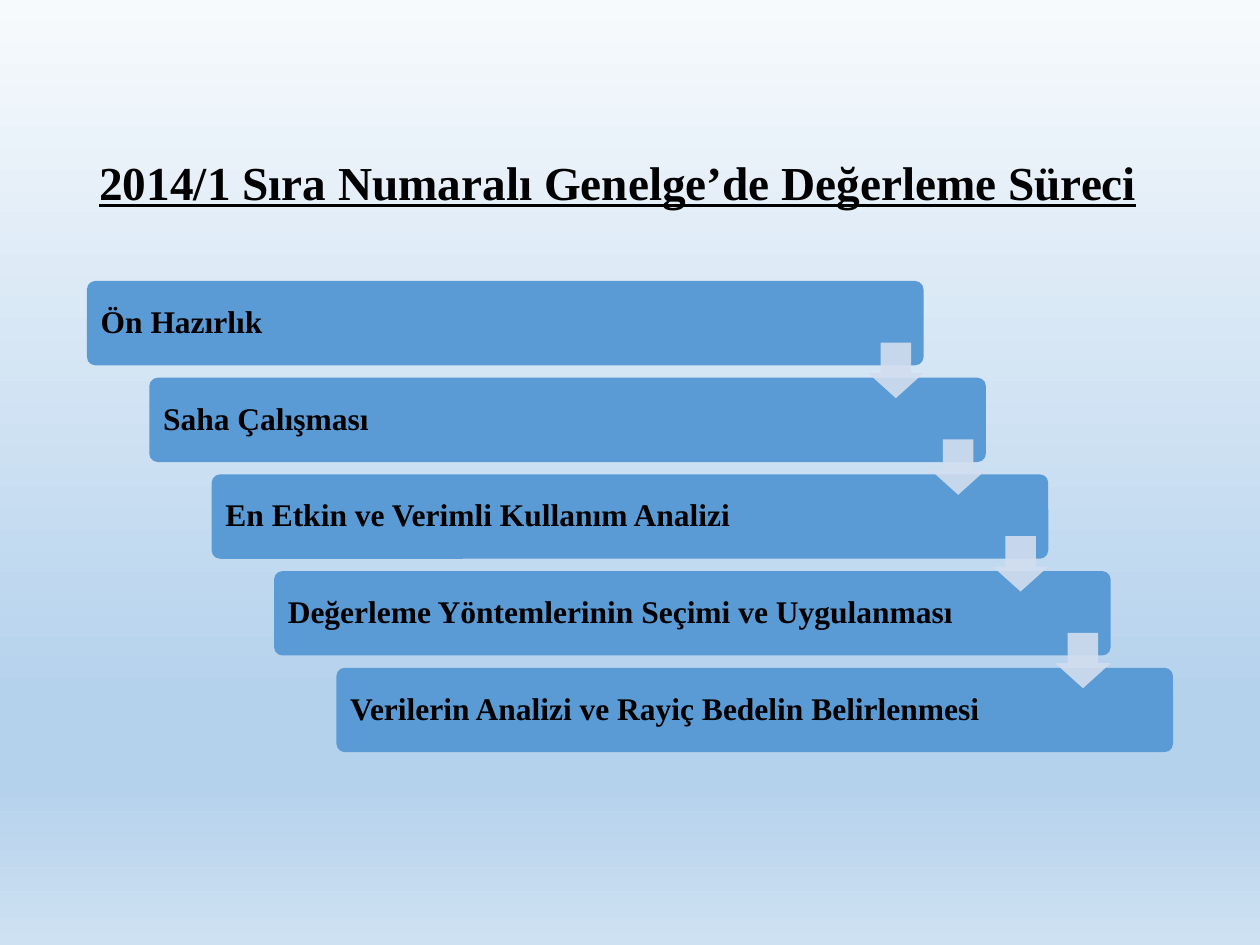
"""Build a slide showing the valuation process as a descending staircase of steps."""
from lxml.etree import SubElement
from pptx import Presentation
from pptx.dml.color import RGBColor
from pptx.enum.shapes import MSO_SHAPE
from pptx.enum.text import MSO_ANCHOR, PP_ALIGN
from pptx.oxml.ns import qn
from pptx.util import Inches, Pt

TITLE = "2014/1 Sıra Numaralı Genelge’de Değerleme Süreci"
STEPS = [
    "Ön Hazırlık",
    "Saha Çalışması",
    "En Etkin ve Verimli Kullanım Analizi",
    "Değerleme Yöntemlerinin Seçimi ve Uygulanması",
    "Verilerin Analizi ve Rayiç Bedelin Belirlenmesi",
]
COLORS = {"text": "000000", "bar": "5B9BD5", "arrow": "D2DEEF"}
BACKGROUND_STOPS = [(0, "F7FAFD"), (74, "B5D2EC"), (83, "B5D2EC"), (100, "CEE1F2")]
FONT = "Times New Roman"

LEFT, RIGHT, FIRST_TOP, LAST_TOP = 0.69, 9.31, 2.23, 5.3
BAR_WIDTH, BAR_HEIGHT = 6.64, 0.67
ARROW_SIZE, ARROW_DROP = 0.44, 0.49
STEP_X = (RIGHT - LEFT - BAR_WIDTH) / (len(STEPS) - 1)
STEP_Y = (LAST_TOP - FIRST_TOP) / (len(STEPS) - 1)


def paint_background(page):
    fill = page.background.fill
    fill.gradient()
    fill.gradient_angle = 270
    stops = page.background._cSld.find(".//" + qn("a:gsLst"))
    for stop in list(stops):
        stops.remove(stop)
    for percent, color in BACKGROUND_STOPS:
        stop = SubElement(stops, qn("a:gs"), pos=str(percent * 1000))
        SubElement(stop, qn("a:srgbClr"), val=color)


def write(shape, text, size, inset_x, inset_y, underline=False):
    frame = shape.text_frame
    frame.word_wrap = True
    frame.vertical_anchor = MSO_ANCHOR.MIDDLE
    frame.margin_left = frame.margin_right = Inches(inset_x)
    frame.margin_top = frame.margin_bottom = Inches(inset_y)
    paragraph = frame.paragraphs[0]
    paragraph.text = text
    paragraph.alignment = PP_ALIGN.LEFT
    paragraph.line_spacing = 0.9
    font = paragraph.font
    font.name, font.size, font.bold = FONT, Pt(size), True
    font.underline = underline
    font.color.rgb = RGBColor.from_string(COLORS["text"])


def add_filled(page, kind, box, color, adjustments):
    shape = page.shapes.add_shape(kind, *map(Inches, box))
    shape.shadow.inherit = False
    shape.fill.solid()
    shape.fill.fore_color.rgb = RGBColor.from_string(color)
    shape.line.fill.background()
    for index, value in enumerate(adjustments):
        shape.adjustments[index] = value
    return shape


def add_bar(page, index, text):
    box = (LEFT + index * STEP_X, FIRST_TOP + index * STEP_Y, BAR_WIDTH, BAR_HEIGHT)
    bar = add_filled(page, MSO_SHAPE.ROUNDED_RECTANGLE, box, COLORS["bar"], [0.1])
    write(bar, text, 18, 0.09, 0.09)


def add_arrow(page, index):
    left = LEFT + BAR_WIDTH - ARROW_SIZE + index * STEP_X
    top = FIRST_TOP + ARROW_DROP + index * STEP_Y
    box = (left, top, ARROW_SIZE, ARROW_SIZE)
    arrow = add_filled(page, MSO_SHAPE.DOWN_ARROW, box, COLORS["arrow"], [0.55, 0.45])
    color = arrow.fill._xPr.find(".//" + qn("a:srgbClr"))
    SubElement(color, qn("a:alpha"), val="90000")


def main():
    deck = Presentation()
    deck.slide_width, deck.slide_height = Inches(10), Inches(7.5)
    page = deck.slides.add_slide(deck.slide_layouts[6])
    paint_background(page)
    title_box = (LEFT, 1.24, RIGHT - LEFT, 0.46)
    title = page.shapes.add_textbox(*map(Inches, title_box))
    write(title, TITLE, 27, 0.1, 0.05, underline=True)
    for index, text in enumerate(STEPS):
        add_bar(page, index, text)
    for index in range(len(STEPS) - 1):
        add_arrow(page, index)
    deck.save("out.pptx")


if __name__ == "__main__":
    main()
